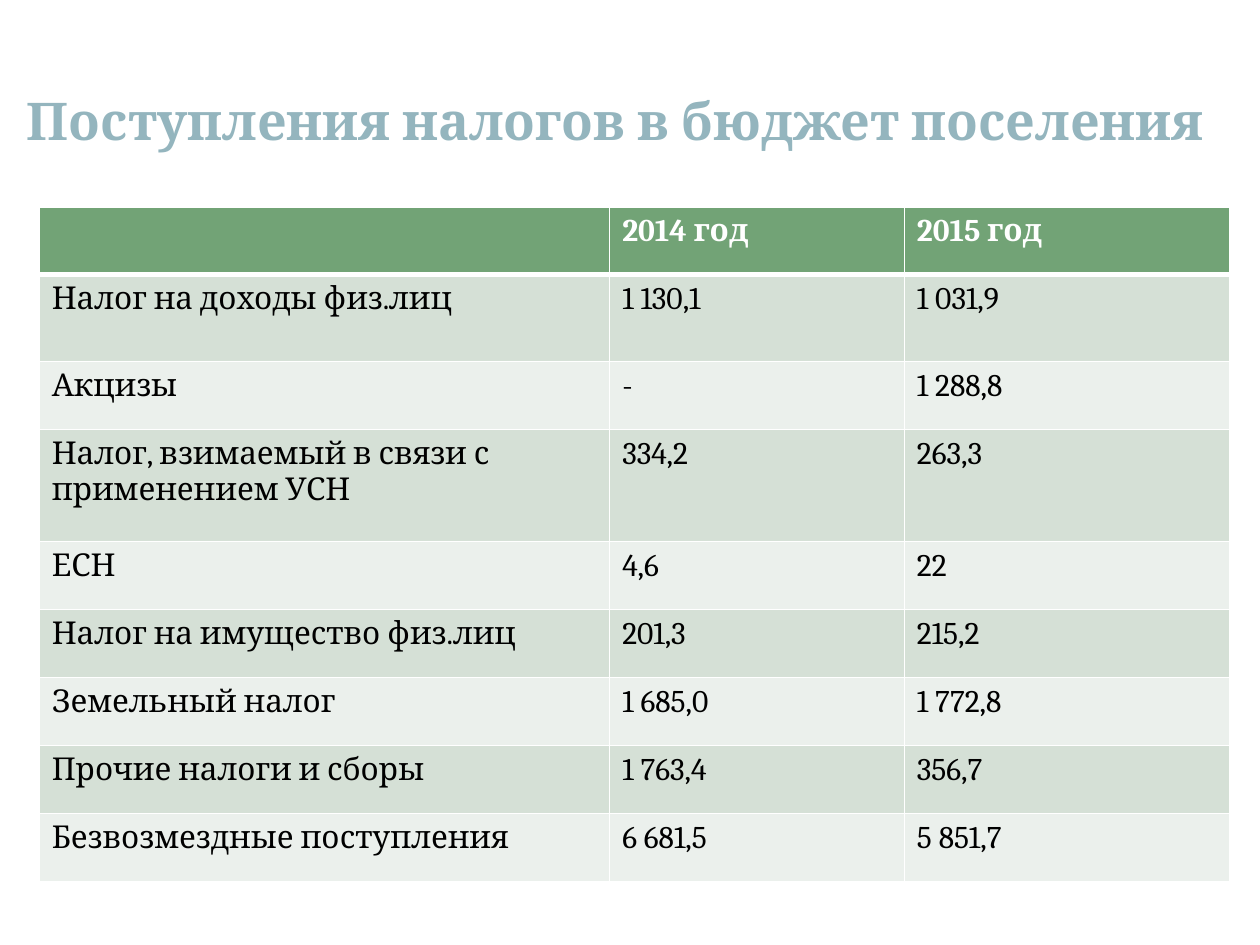
from lxml import etree
from pptx import Presentation
from pptx.dml.color import RGBColor
from pptx.enum.text import MSO_ANCHOR, MSO_AUTO_SIZE, PP_ALIGN
from pptx.oxml.ns import qn
from pptx.util import Cm, Pt

BOTTOM = MSO_ANCHOR.BOTTOM
CENTER = PP_ALIGN.CENTER
FIXED = MSO_AUTO_SIZE.NONE

TITLE = "Поступления налогов в бюджет поселения"
ROWS = [
    ("", "2014 год", "2015 год"),
    ("Налог на доходы физ.лиц", "1 130,1", "1 031,9"),
    ("Акцизы", "-", "1 288,8"),
    ("Налог, взимаемый в связи с применением УСН", "334,2", "263,3"),
    ("ЕСН", "4,6", "22"),
    ("Налог на имущество физ.лиц", "201,3", "215,2"),
    ("Земельный налог", "1 685,0", "1 772,8"),
    ("Прочие налоги и сборы", "1 763,4", "356,7"),
    ("Безвозмездные поступления", "6 681,5", "5 851,7"),
]
WIDTHS = (11.5, 5.94, 6.56)
HEIGHT = 1.37
TALL = {1: 1.75, 3: 2.26}
WHITE, HEAD = "FFFFFF", "72A376"
BANDS = ("EBF0EC", "D5E0D6")
TITLE_FONT = {"name": "Cambria", "size": Pt(29.7), "bold": True}
CELL_FONT = {"name": "Cambria", "size": Pt(18)}


def style(font, color, values):
    for key, value in values.items():
        setattr(font, key, value)
    font.color.rgb = RGBColor.from_string(color)


def edge(cell, side, width):
    """Add a white border to one side (L, R, T or B) of a cell."""
    props = cell._tc.get_or_add_tcPr()
    line = etree.SubElement(props, qn(f"a:ln{side}"), w=str(Pt(width)))
    fill = etree.SubElement(line, qn("a:solidFill"))
    etree.SubElement(fill, qn("a:srgbClr"), val=WHITE)


def add_title(slide):
    title = slide.shapes.title
    title.left, title.top = Cm(0), Cm(0.64)
    title.width, title.height = Cm(24.82), Cm(2.54)
    frame = title.text_frame
    frame.text = TITLE
    for key, value in {"vertical_anchor": BOTTOM, "word_wrap": True,
                       "auto_size": FIXED}.items():
        setattr(frame, key, value)
    par = frame.paragraphs[0]
    par.alignment = CENTER
    style(par.runs[0].font, "94B5BE", TITLE_FONT)


def add_taxes(slide):
    heights = [TALL.get(i, HEIGHT) for i in range(len(ROWS))]
    table = slide.shapes.add_table(
        len(ROWS), len(WIDTHS), Cm(0.79), Cm(4.17),
        Cm(sum(WIDTHS)), Cm(sum(heights))).table
    for col, width in zip(table.columns, WIDTHS):
        col.width = Cm(width)
    for i, (row, texts) in enumerate(zip(table.rows, ROWS)):
        row.height = Cm(heights[i])
        head = i == 0
        edges = {"L": 1, "R": 1, "T": 3 if i == 1 else 1, "B": 3 if head else 1}
        for cell, text in zip(row.cells, texts):
            for side, width in edges.items():
                edge(cell, side, width)
            cell.fill.solid()
            cell.fill.fore_color.rgb = RGBColor.from_string(
                HEAD if head else BANDS[i % 2])
            cell.text = text
            style(cell.text_frame.paragraphs[0].font,
                  WHITE if head else "000000", CELL_FONT)
            for run in cell.text_frame.paragraphs[0].runs:
                style(run.font, WHITE if head else "000000",
                      {**CELL_FONT, "bold": head})


def main():
    deck = Presentation()
    deck.slide_width, deck.slide_height = Cm(25.4), Cm(19.05)
    slide = deck.slides.add_slide(deck.slide_layouts[5])
    add_title(slide)
    add_taxes(slide)
    deck.save("out.pptx")


if __name__ == "__main__":
    main()
